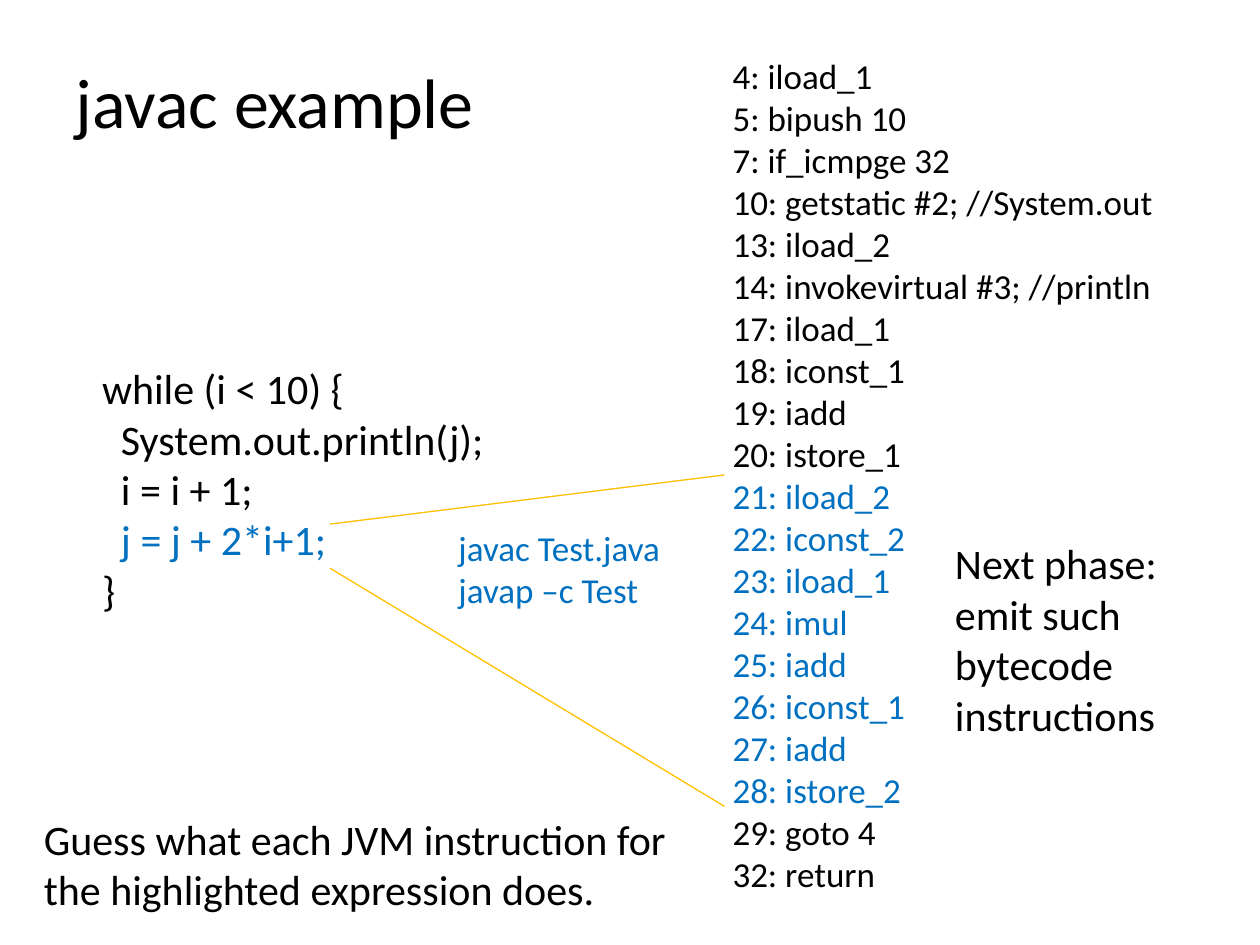
from dataclasses import dataclass

from lxml.etree import SubElement
from pptx import Presentation
from pptx.dml.color import RGBColor
from pptx.enum.shapes import MSO_CONNECTOR
from pptx.enum.text import MSO_ANCHOR, MSO_AUTO_SIZE, PP_ALIGN
from pptx.oxml.ns import qn
from pptx.util import Pt


@dataclass(frozen=True)
class Theme:
    """Colours, font and type sizes of the slide."""

    font: str = "Calibri"
    ink: RGBColor = RGBColor(0x00, 0x00, 0x00)
    highlight: RGBColor = RGBColor(0x00, 0x70, 0xC0)
    guide: RGBColor = RGBColor(0xFF, 0xC0, 0x00)
    title: int = 40
    body: int = 24
    listing: int = 20


THEME = Theme()

SOURCE_CODE = [
    (0, "while (i < 10) {"),
    (1, "System.out.println(j);"),
    (1, "i = i + 1;"),
    (1, "j = j + 2*i+1;"),
    (0, "}"),
]
HIGHLIGHTED_STATEMENT = 3

BYTECODE = [
    "4: iload_1",
    "5: bipush 10",
    "7: if_icmpge 32",
    "10: getstatic #2; //System.out",
    "13: iload_2",
    "14: invokevirtual #3; //println",
    "17: iload_1",
    "18: iconst_1",
    "19: iadd",
    "20: istore_1",
    "21: iload_2",
    "22: iconst_2",
    "23: iload_1",
    "24: imul",
    "25: iadd",
    "26: iconst_1",
    "27: iadd",
    "28: istore_2",
    "29: goto 4",
    "32: return",
]
HIGHLIGHTED_BYTECODE = range(10, 18)


def write_line(paragraph, text, *, size, color=THEME.ink, indent=0):
    """Write one formatted, left-aligned line with an optional indent."""
    paragraph.alignment = PP_ALIGN.LEFT
    if indent:
        paragraph._p.get_or_add_pPr().set("marL", str(Pt(indent)))
    run = paragraph.add_run()
    run.text = text
    run.font.name = THEME.font
    run.font.size = Pt(size)
    run.font.color.rgb = color


def add_title(slide, text, bounds):
    """Move and fill the title placeholder."""
    title = slide.shapes.title
    title.left, title.top, title.width, title.height = map(Pt, bounds)
    title.text_frame.vertical_anchor = MSO_ANCHOR.MIDDLE
    write_line(title.text_frame.paragraphs[0], text, size=THEME.title)


def add_lines(slide, lines, bounds, *, size, wrap=True):
    """Add a text box of (text, colour, indent) lines."""
    frame = slide.shapes.add_textbox(*map(Pt, bounds)).text_frame
    frame.word_wrap = wrap
    frame.auto_size = MSO_AUTO_SIZE.SHAPE_TO_FIT_TEXT
    frame.vertical_anchor = MSO_ANCHOR.MIDDLE
    for number, (text, color, indent) in enumerate(lines):
        paragraph = frame.add_paragraph() if number else frame.paragraphs[0]
        write_line(paragraph, text, size=size, color=color, indent=indent)


def add_guide(slide, start, end):
    """Add a thin line from the statement to its bytecode."""
    guide = slide.shapes.add_connector(
        MSO_CONNECTOR.STRAIGHT, *map(Pt, (*start, *end))
    )
    guide.line.color.rgb = THEME.guide
    guide.line.width = Pt(0.75)
    SubElement(guide._element.spPr, qn("a:effectLst"))


def plain(lines, color=THEME.ink):
    """Give lines one colour and no indent."""
    return [(line, color, 0) for line in lines]


def main():
    """Build and save the slide."""
    deck = Presentation()
    deck.slide_width, deck.slide_height = Pt(720), Pt(540)
    slide = deck.slides.add_slide(deck.slide_layouts.get_by_name("Title Only"))

    add_title(slide, "javac example", (36, 12.25, 350, 90))

    statements = [
        (text, THEME.highlight if row == HIGHLIGHTED_STATEMENT else THEME.ink, 21.7 + 10.85 * depth)
        for row, (depth, text) in enumerate(SOURCE_CODE)
    ]
    add_lines(slide, statements, (29.5, 203, 260.6, 152.6), size=THEME.body)

    instructions = [
        (text, THEME.highlight if row in HIGHLIGHTED_BYTECODE else THEME.ink, 9)
        for row, text in enumerate(BYTECODE)
    ]
    add_lines(slide, instructions, (402.5, 25.2, 289.4, 491.8), size=THEME.listing)

    commands = plain(["javac Test.java", "javap –c Test"], THEME.highlight)
    add_lines(slide, commands, (254.9, 297.4, 131, 55.4), size=THEME.listing, wrap=False)

    add_guide(slide, (188.6, 299.5), (414, 271.4))
    add_guide(slide, (188.6, 324.7), (414, 460.8))

    next_phase = plain(["Next phase:", "emit such bytecode instructions"])
    add_lines(slide, next_phase, (538.6, 303.1, 149, 123.8), size=THEME.body)

    task = plain(["Guess what each JVM instruction for the highlighted expression does."])
    add_lines(slide, task, (18, 460.8, 378.7, 65.5), size=THEME.body)

    deck.save("out.pptx")


if __name__ == "__main__":
    main()
